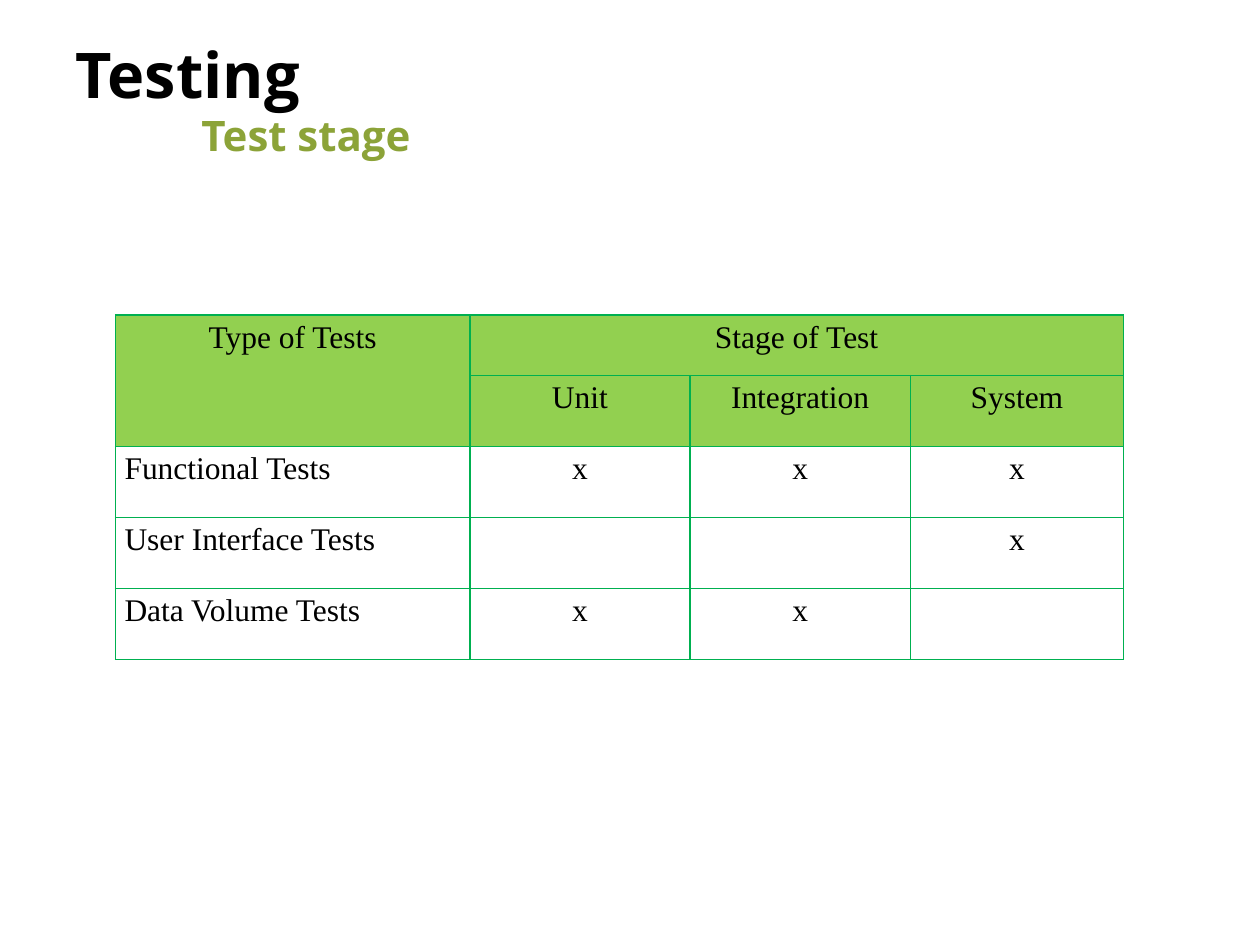
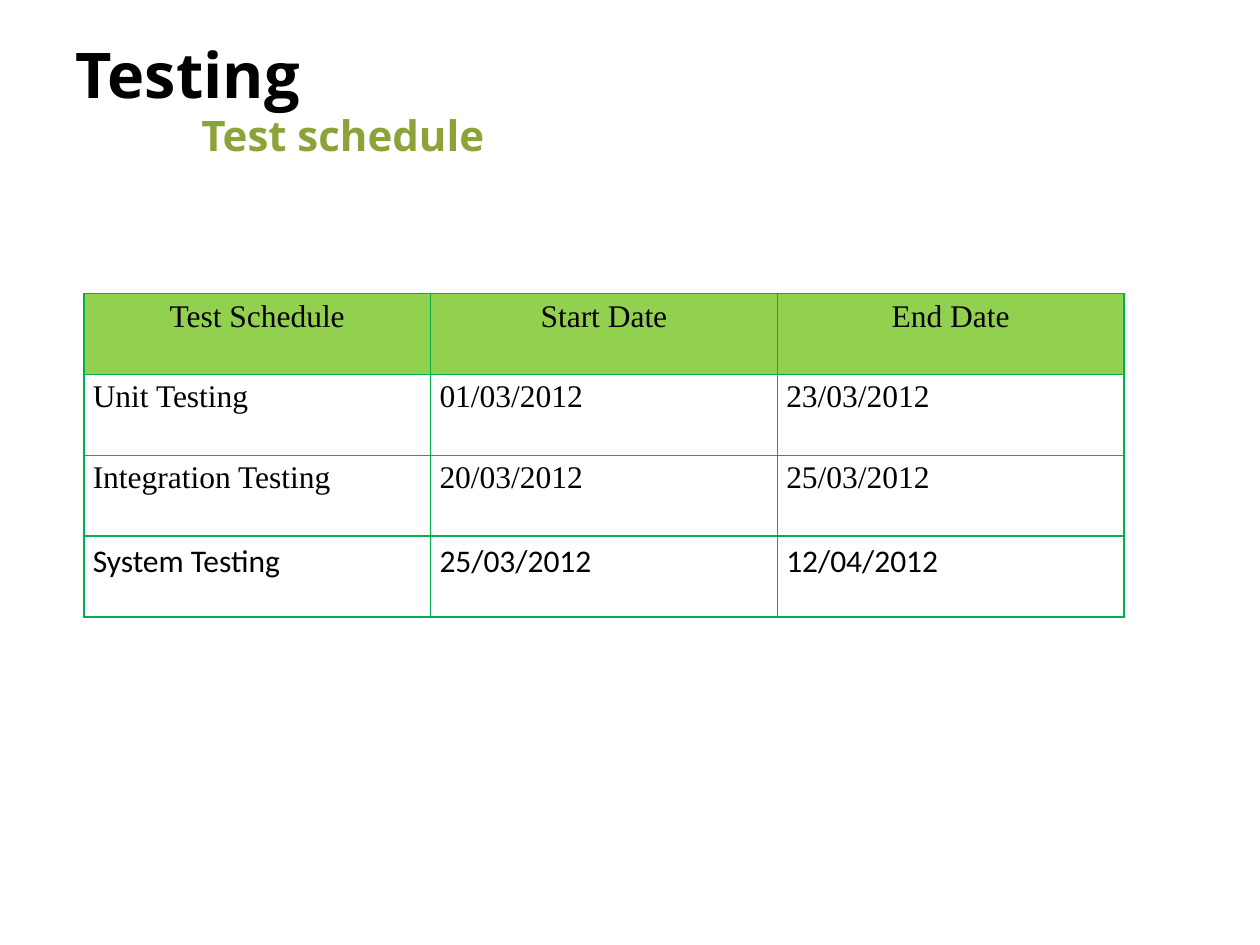
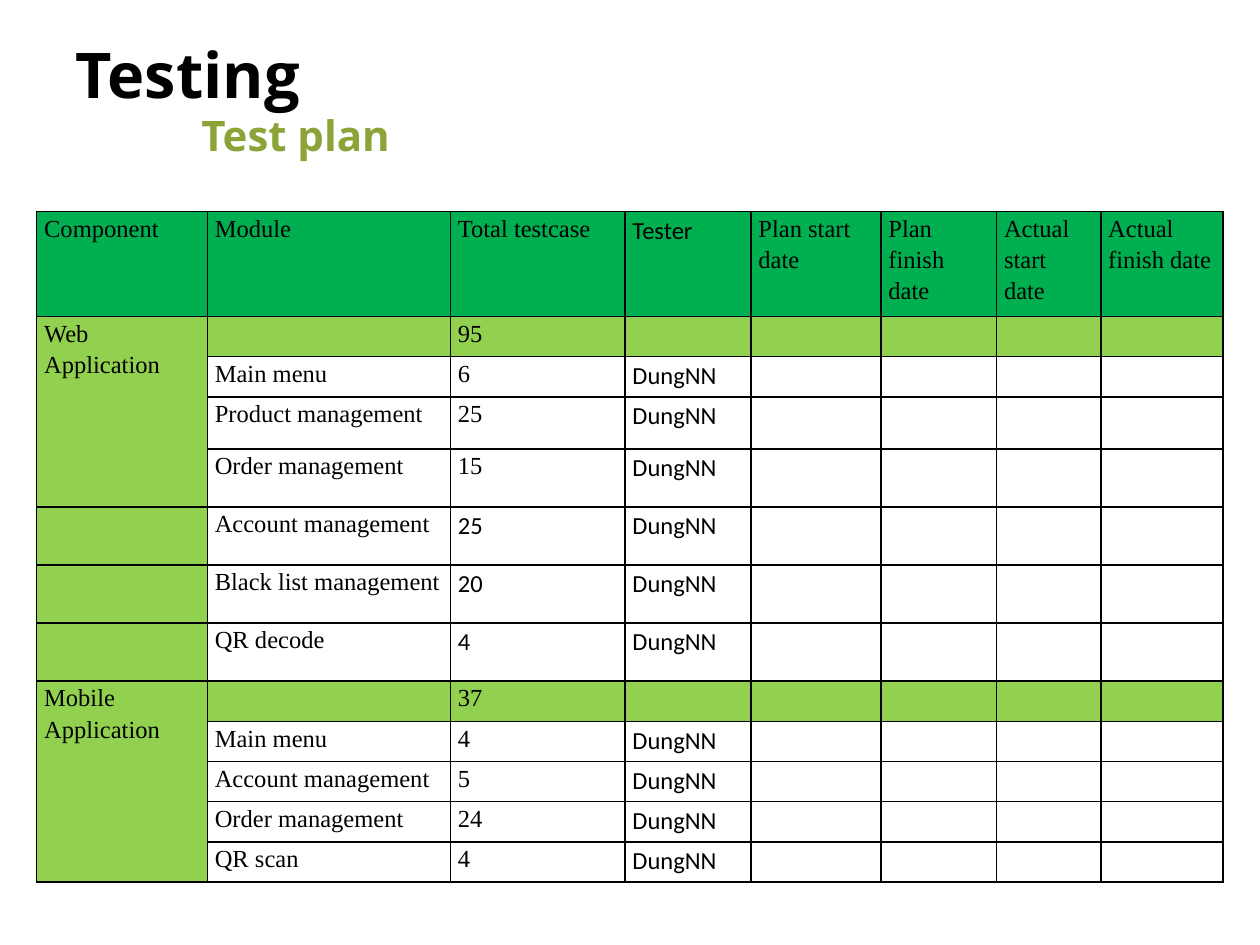
from lxml import etree
from pptx import Presentation
from pptx.dml.color import RGBColor
from pptx.enum import text
from pptx.oxml import ns
from pptx.util import Cm, Pt

BLACK = RGBColor(0x00, 0x00, 0x00)
OLIVE = RGBColor(0x8C, 0xA3, 0x38)
LIME = RGBColor(0x92, 0xD0, 0x50)
GREEN = RGBColor(0x00, 0xB0, 0x50)

HEAD = "Open Sans"
SERIF = "Times New Roman"
SANS = "Calibri"
LEFT, MID = text.PP_ALIGN.LEFT, text.PP_ALIGN.CENTER

STAGE = [
    ["Type of Tests", "Stage of Test", "", ""],
    ["", "Unit", "Integration", "System"],
    ["Functional Tests", "x", "x", "x"],
    ["User Interface Tests", "", "", "x"],
    ["Data Volume Tests", "x", "x", ""],
]
DATES = [
    ["Test Schedule", "Start Date", "End Date"],
    ["Unit Testing", "01/03/2012", "23/03/2012"],
    ["Integration Testing", "20/03/2012", "25/03/2012"],
    ["System Testing", "25/03/2012", "12/04/2012"],
]
PLAN_HEAD = ["Component", "Module", "Total testcase", "Tester", "Plan start date",
             "Plan finish date", "Actual start date", "Actual finish date"]
TESTER = "DungNN"
PARTS = [
    ("Web Application", "95", [
        ("Main menu", "6"), ("Product management", "25"),
        ("Order management", "15"), ("Account management", "25"),
        ("Black list management", "20"), ("QR decode", "4")]),
    ("Mobile Application", "37", [
        ("Main menu", "4"), ("Account management", "5"),
        ("Order management", "24"), ("QR scan", "4")]),
]


def add_run(para, words, font, size, color, bold=False):
    run = para.add_run()
    run.text = words
    run.font.name = font
    run.font.size = Pt(size)
    run.font.bold = bold
    run.font.color.rgb = color


def put_head(shape, top, high, words, size, color, indent=0):
    """Place a heading box and write its one bold line."""
    shape.left, shape.top = Cm(1.27), Cm(top)
    shape.width, shape.height = Cm(22.86), Cm(high)
    frame = shape.text_frame
    frame.word_wrap = True
    frame.auto_size = text.MSO_AUTO_SIZE.NONE
    frame.vertical_anchor = text.MSO_ANCHOR.MIDDLE
    para = frame.paragraphs[0]
    para.alignment = LEFT
    if indent:
        para._p.get_or_add_pPr().set("marL", str(Cm(indent)))
    add_run(para, words, HEAD, size, color, bold=True)


def add_page(deck, topic):
    page = deck.slides.add_slide(deck.slide_layouts[5])
    put_head(page.shapes.title, 0.43, 2.11, "Testing", 36, BLACK)
    box = page.shapes.add_textbox(0, 0, 0, 0)
    put_head(box, 2.04, 1.35, topic, 24, OLIVE, indent=2.54)
    return page


def add_edges(cell, color):
    props = cell._tc.get_or_add_tcPr()
    for side in ("lnL", "lnR", "lnT", "lnB"):
        line = etree.SubElement(props, ns.qn("a:" + side), w=str(Pt(1)))
        fill = etree.SubElement(line, ns.qn("a:solidFill"))
        etree.SubElement(fill, ns.qn("a:srgbClr"), val=str(color))


def add_grid(page, left, top, cols, rows, data, size, inset, edge,
             fill, align=lambda r, c: LEFT, font=lambda r, c: SERIF, spans=()):
    """Add a table; fill, align and font give a cell's look from its row and column."""
    frame = page.shapes.add_table(len(rows), len(cols), Cm(left), Cm(top),
                                  Cm(sum(cols)), Cm(sum(rows)))
    grid = frame.table
    grid.first_row = grid.horz_banding = False
    for col, width in zip(grid.columns, cols):
        col.width = Cm(width)
    for row, height in zip(grid.rows, rows):
        row.height = Cm(height)
    for r, line in enumerate(data):
        for c, words in enumerate(line):
            cell = grid.cell(r, c)
            cell.margin_left = cell.margin_right = Cm(inset)
            cell.margin_top = cell.margin_bottom = 0
            add_edges(cell, edge)
            color = fill(r, c)
            if color is None:
                cell.fill.background()
            else:
                cell.fill.solid()
                cell.fill.fore_color.rgb = color
            if words:
                para = cell.text_frame.paragraphs[0]
                para.alignment = align(r, c)
                para.line_spacing = 1.15
                add_run(para, words, font(r, c), size, BLACK)
    for r1, c1, r2, c2 in spans:
        grid.cell(r1, c1).merge(grid.cell(r2, c2))


def plan_rows():
    rows = [PLAN_HEAD]
    for part, total, items in PARTS:
        rows.append([part, "", total] + [""] * 5)
        rows += [["", name, count, TESTER] + [""] * 4 for name, count in items]
    return rows


def plan_fill(r, c):
    if r == 0:
        return GREEN
    return LIME if c == 0 or r in (1, 8) else None


def plan_font(r, c):
    return SANS if c == 3 or (c == 2 and 5 <= r <= 7) else SERIF


def main():
    deck = Presentation()
    deck.slide_width, deck.slide_height = Cm(25.4), Cm(19.05)

    add_grid(add_page(deck, "Test stage"), 2.33, 6.35,
             [7.14, 4.44, 4.44, 4.3], [1.22] + [1.43] * 4, STAGE, 18, 0.18, GREEN,
             fill=lambda r, c: LIME if r < 2 else None,
             align=lambda r, c: MID if r < 2 or c else LEFT,
             spans=[(0, 0, 1, 0), (0, 1, 0, 3)])

    add_grid(add_page(deck, "Test schedule"), 1.69, 5.92,
             [6.99] * 3, [1.63] * 4, DATES, 18, 0.18, GREEN,
             fill=lambda r, c: None if r else LIME,
             align=lambda r, c: LEFT if r else MID,
             font=lambda r, c: SANS if r == 3 else SERIF)

    add_grid(add_page(deck, "Test plan"), 0.74, 4.26,
             [3.44, 4.9, 3.52, 2.54, 2.62, 2.33, 2.1, 2.46],
             [2.12, 0.81, 0.81, 1.05] + [1.17] * 4 + [0.81] * 5,
             plan_rows(), 14, 0.15, BLACK, fill=plan_fill, font=plan_font,
             spans=[(1, 0, 4, 0), (8, 0, 12, 0)])

    deck.save("out.pptx")


if __name__ == "__main__":
    main()
